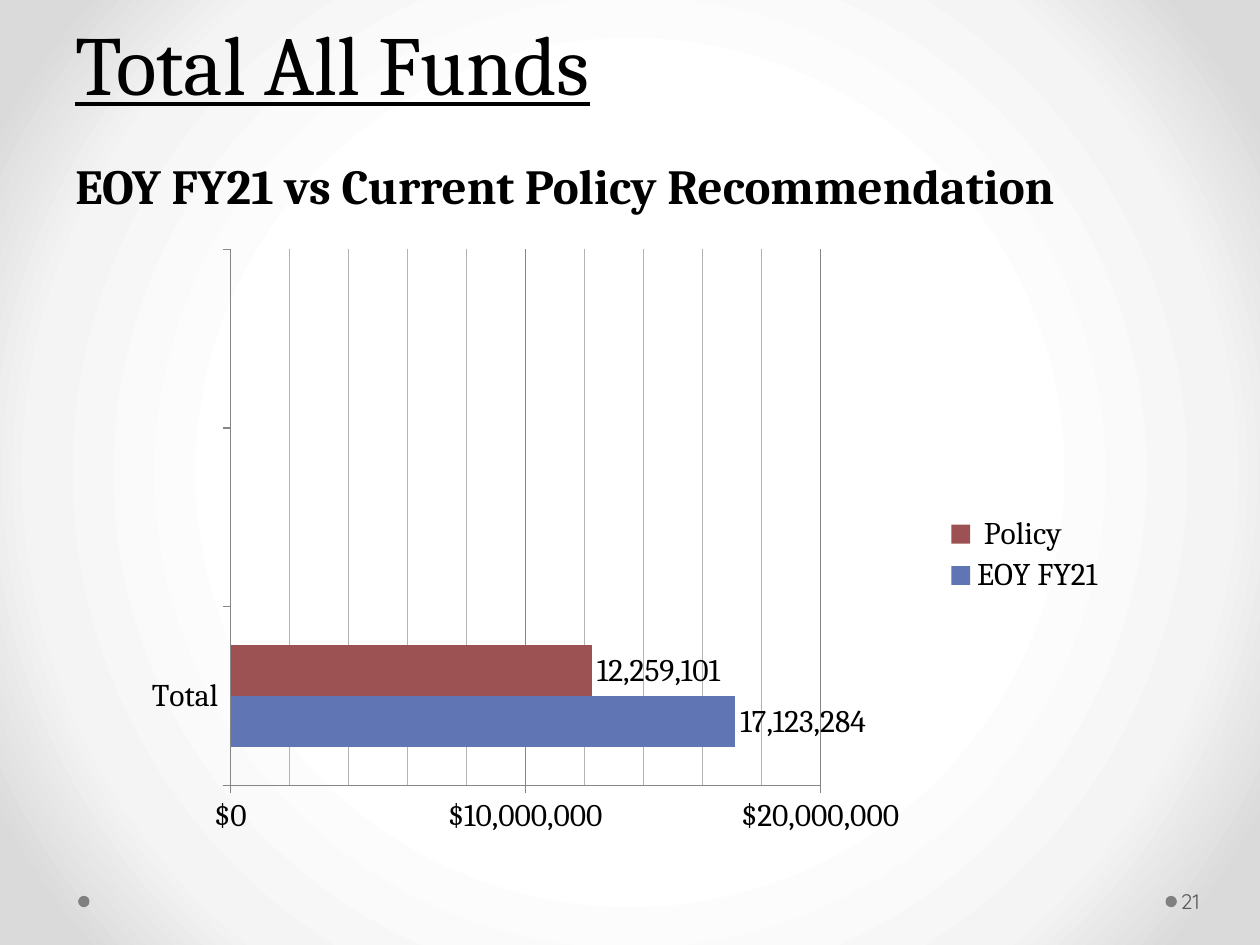
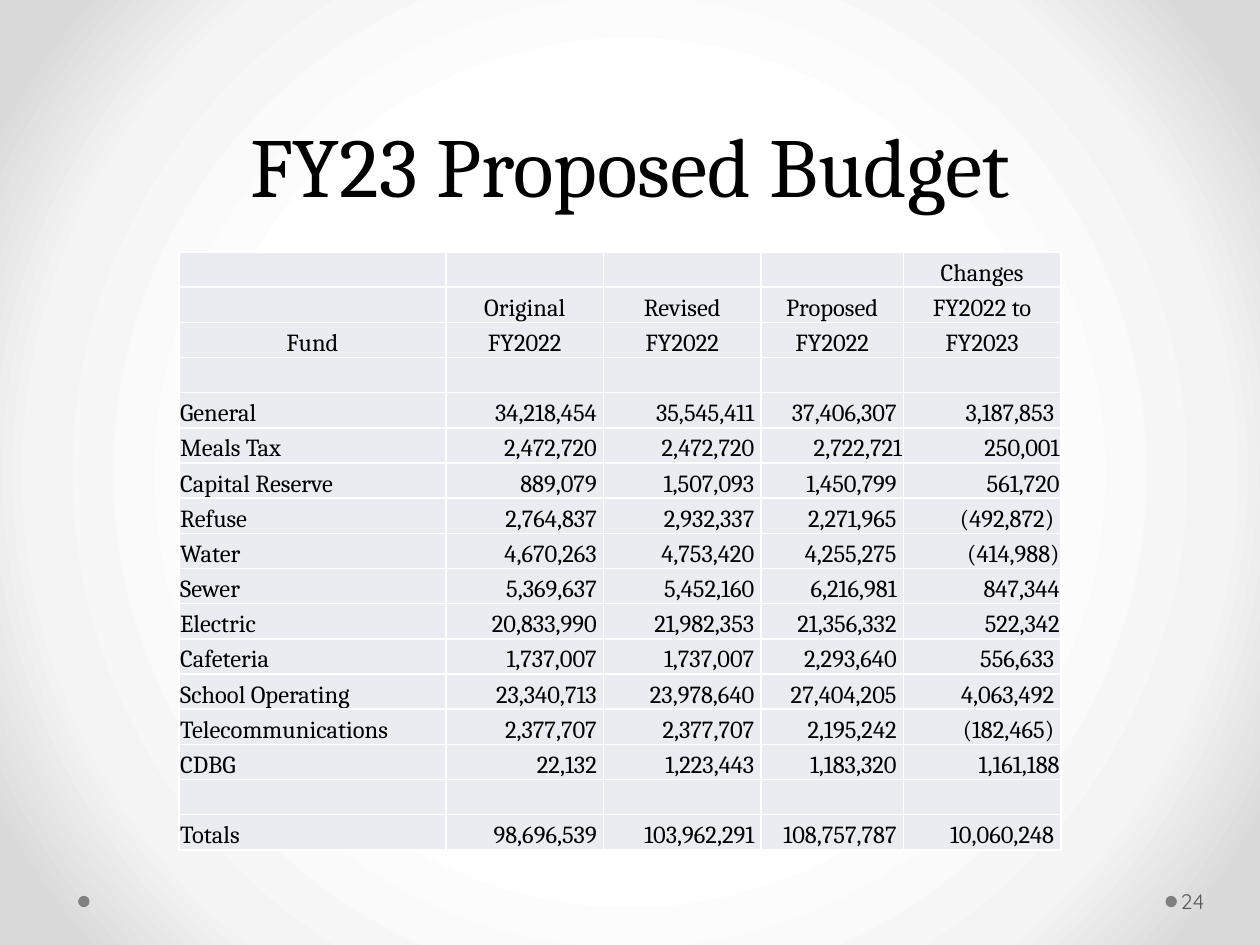
from lxml.etree import SubElement
from pptx import Presentation
from pptx.chart.data import CategoryChartData
from pptx.dml.color import RGBColor
from pptx.enum.chart import XL_CHART_TYPE as ChartType
from pptx.enum.chart import XL_LABEL_POSITION as LabelPosition
from pptx.enum.chart import XL_LEGEND_POSITION as LegendPosition
from pptx.enum.chart import XL_TICK_MARK as TickMark
from pptx.enum.shapes import MSO_SHAPE as Shape
from pptx.enum.text import MSO_ANCHOR as Anchor
from pptx.enum.text import PP_ALIGN as Align
from pptx.oxml import parse_xml
from pptx.oxml.ns import nsdecls, qn
from pptx.util import Inches, Pt

SERIF = "Cambria"
SANS = "Quicksand"
BLACK = "000000"
WHITE = "FFFFFF"
DOT_GRAY = "808080"
NUMBER_GRAY = "595959"
AXIS_GRAY = "868686"
MINOR_GRAY = "B3B3B3"
CELL_FILL = "EAECF2"
BACKDROP_STOPS = [(50, WHITE), (76, "F4F4F4"), (92, "DADADA")]

TITLE_BOX = (0.5, 0, 9, 1.75)
NUMBER_BOX = (9.34, 6.95, 0.61, 0.4)
DOT_LEFTS = (0.62, 9.25)

FUND_SERIES = [
    ("EOY FY21", 17123284, "6076B4"),
    (" Policy", 12259101, "9C5252"),
]

COLUMN_WIDTHS = [2.12, 1.25, 1.25, 1.13, 1.25]
HEADER_ROWS = [
    "||||Changes",
    "|Original|Revised|Proposed|FY2022 to",
    "Fund|FY2022|FY2022|FY2022|FY2023",
]
FUND_ROWS = [
    "||||",
    "General|34,218,454 |35,545,411 |37,406,307 |3,187,853 ",
    "Meals Tax|2,472,720 |2,472,720 |2,722,721|250,001",
    "Capital Reserve|889,079 |1,507,093 |1,450,799 |561,720",
    "Refuse|2,764,837 |2,932,337 |2,271,965 |(492,872) ",
    "Water|4,670,263 |4,753,420 |4,255,275 |(414,988)",
    "Sewer|5,369,637 |5,452,160 |6,216,981 |847,344",
    "Electric|20,833,990 |21,982,353 |21,356,332 |522,342",
    "Cafeteria|1,737,007 |1,737,007 |2,293,640 |556,633 ",
    "School Operating|23,340,713 |23,978,640 |27,404,205 |4,063,492 ",
    "Telecommunications|2,377,707 |2,377,707 |2,195,242 |(182,465) ",
    "CDBG|22,132 |1,223,443 |1,183,320 |1,161,188",
    "||||",
    "Totals|98,696,539 |103,962,291 |108,757,787 |10,060,248 ",
]


def color(value):
    return RGBColor.from_string(value)


def inches(box):
    return [Inches(length) for length in box]


def add_span(para, text, size, font=SERIF, ink=BLACK, bold=False, underline=False):
    span = para.add_run()
    span.text = text
    span.font.size = Pt(size)
    span.font.name = font
    span.font.color.rgb = color(ink)
    span.font.bold = bold
    span.font.underline = underline


def add_text_frame(page, box, anchor):
    frame = page.shapes.add_textbox(*inches(box)).text_frame
    frame.word_wrap = True
    frame.vertical_anchor = anchor
    return frame


def paint_backdrop(master):
    master.background.fill.solid()
    holder = master.element.find(".//" + qn("p:bgPr"))
    stops = "".join(
        f'<a:gs pos="{place * 1000}"><a:srgbClr val="{tone}"/></a:gs>'
        for place, tone in BACKDROP_STOPS
    )
    gradient = parse_xml(
        f'<a:gradFill {nsdecls("a")} rotWithShape="1"><a:gsLst>{stops}</a:gsLst>'
        '<a:path path="circle"><a:fillToRect l="50000" t="50000" r="50000" b="50000"/>'
        "</a:path></a:gradFill>"
    )
    holder.replace(holder[0], gradient)


def add_page(deck, number):
    page = deck.slides.add_slide(deck.slide_layouts[6])
    for left in DOT_LEFTS:
        dot = page.shapes.add_shape(Shape.OVAL, *inches((left, 7.11, 0.09, 0.09)))
        dot.shadow.inherit = False
        dot.fill.solid()
        dot.fill.fore_color.rgb = color(DOT_GRAY)
        dot.line.fill.background()
    frame = add_text_frame(page, NUMBER_BOX, Anchor.MIDDLE)
    frame.margin_left = Inches(0.03)
    frame.margin_right = Inches(0.05)
    add_span(frame.paragraphs[0], number, 12, SANS, NUMBER_GRAY)
    return page


def add_title(page, text, subtitle=None, align=Align.LEFT):
    para = add_text_frame(page, TITLE_BOX, Anchor.BOTTOM).paragraphs[0]
    para.alignment = align
    para.line_spacing = Pt(58)
    add_span(para, text, 48, underline=subtitle is not None)
    if subtitle:
        para.add_line_break()
        add_span(para, subtitle, 28, bold=True)


def set_layout(element, area, inner=False):
    target = '<c:layoutTarget val="inner"/>' if inner else ""
    modes = "".join(f'<c:{axis}Mode val="edge"/>' for axis in "xy")
    sizes = "".join(f'<c:{key} val="{value}"/>' for key, value in zip("xywh", area))
    layout = parse_xml(
        f'<c:layout {nsdecls("c")}><c:manualLayout>{target}{modes}{sizes}'
        "</c:manualLayout></c:layout>"
    )
    for old in element.findall(qn("c:layout")):
        element.remove(old)
    position = element.find(qn("c:legendPos"))
    element.insert(0 if position is None else 1, layout)


def draw_line(line, tone):
    line.color.rgb = color(tone)
    line.width = Pt(0.75)


def draw_minor_gridlines(axis):
    axis.has_minor_gridlines = True
    gridlines = axis._element.find(qn("c:minorGridlines"))
    properties = SubElement(gridlines, qn("c:spPr"))
    line = SubElement(properties, qn("a:ln"), w=str(Pt(0.75)))
    fill = SubElement(line, qn("a:solidFill"))
    SubElement(fill, qn("a:srgbClr"), val=MINOR_GRAY)


def style_axes(chart):
    for axis in (chart.category_axis, chart.value_axis):
        axis.major_tick_mark = TickMark.OUTSIDE
        draw_line(axis.format.line, AXIS_GRAY)
    amounts = chart.value_axis
    amounts.minimum_scale = 0
    amounts.maximum_scale = 20000000
    amounts.major_unit = 10000000
    amounts.minor_unit = 2000000
    amounts.has_major_gridlines = True
    draw_line(amounts.major_gridlines.format.line, AXIS_GRAY)
    draw_minor_gridlines(amounts)
    amounts.tick_labels.number_format = '"$"#,##0'
    amounts.tick_labels.number_format_is_linked = False


def add_fund_chart(page, box):
    data = CategoryChartData()
    data.categories = ["Total", "", ""]
    for name, total, _ in FUND_SERIES:
        data.add_series(name, [total, None, None])
    chart = page.shapes.add_chart(ChartType.BAR_CLUSTERED, *inches(box), data).chart
    chart.has_title = False
    chart.font.size = Pt(18)
    chart.font.name = SERIF
    chart.font.color.rgb = color(BLACK)
    chart.has_legend = True
    chart.legend.position = LegendPosition.RIGHT
    chart.legend.include_in_layout = False
    set_layout(chart.legend._element, (0.74, 0.45, 0.16, 0.14))

    plot = chart.plots[0]
    plot.gap_width = 150
    plot.overlap = 0
    plot.vary_by_categories = False
    set_layout(plot._element.getparent(), (0.12, 0.03, 0.52, 0.86), inner=True)
    for series, (_, _, tone) in zip(plot.series, FUND_SERIES):
        series.format.fill.solid()
        series.format.fill.fore_color.rgb = color(tone)
        labels = series.data_labels
        labels.show_value = True
        labels.position = LabelPosition.OUTSIDE_END
        labels.number_format = "#,##0"
        labels.number_format_is_linked = False
    style_axes(chart)


def style_cell(cell):
    cell.vertical_anchor = Anchor.BOTTOM
    cell.margin_left = cell.margin_right = cell.margin_top = Inches(0.01)
    cell.margin_bottom = 0
    properties = cell._tc.get_or_add_tcPr()
    for side in ("lnL", "lnR", "lnT", "lnB"):
        border = SubElement(properties, qn(f"a:{side}"), w=str(Pt(1)))
        fill = SubElement(border, qn("a:solidFill"))
        SubElement(fill, qn("a:srgbClr"), val=WHITE)
    cell.fill.solid()
    cell.fill.fore_color.rgb = color(CELL_FILL)


def fill_cell(cell, text, align):
    style_cell(cell)
    para = cell.text_frame.paragraphs[0]
    para.alignment = align
    if text:
        add_span(para, text, 14)
    else:
        SubElement(para._p, qn("a:endParaRPr"), sz="1400")


def add_budget_table(page, box):
    lines = HEADER_ROWS + FUND_ROWS
    frame = page.shapes.add_table(len(lines), len(COLUMN_WIDTHS), *inches(box))
    table = frame.table
    table.first_row = False
    table.horz_banding = False
    for column, width in zip(table.columns, COLUMN_WIDTHS):
        column.width = Inches(width)
    for row, line in enumerate(lines):
        table.rows[row].height = Inches(box[3] / len(lines))
        for column, text in enumerate(line.split("|")):
            body_align = Align.RIGHT if column else Align.LEFT
            align = Align.CENTER if row < len(HEADER_ROWS) else body_align
            fill_cell(table.cell(row, column), text, align)


def build_funds_page(deck):
    page = add_page(deck, "21")
    add_title(page, "Total All Funds", "EOY FY21 vs Current Policy Recommendation")
    add_fund_chart(page, (0.75, 1.83, 9, 4.95))


def build_budget_page(deck):
    page = add_page(deck, "24")
    add_title(page, "FY23 Proposed Budget", align=Align.CENTER)
    add_budget_table(page, (1.42, 2, 7, 4.75))


def main():
    deck = Presentation()
    deck.slide_width = Inches(10)
    deck.slide_height = Inches(7.5)
    paint_backdrop(deck.slide_master)
    build_funds_page(deck)
    build_budget_page(deck)
    deck.save("out.pptx")


if __name__ == "__main__":
    main()
